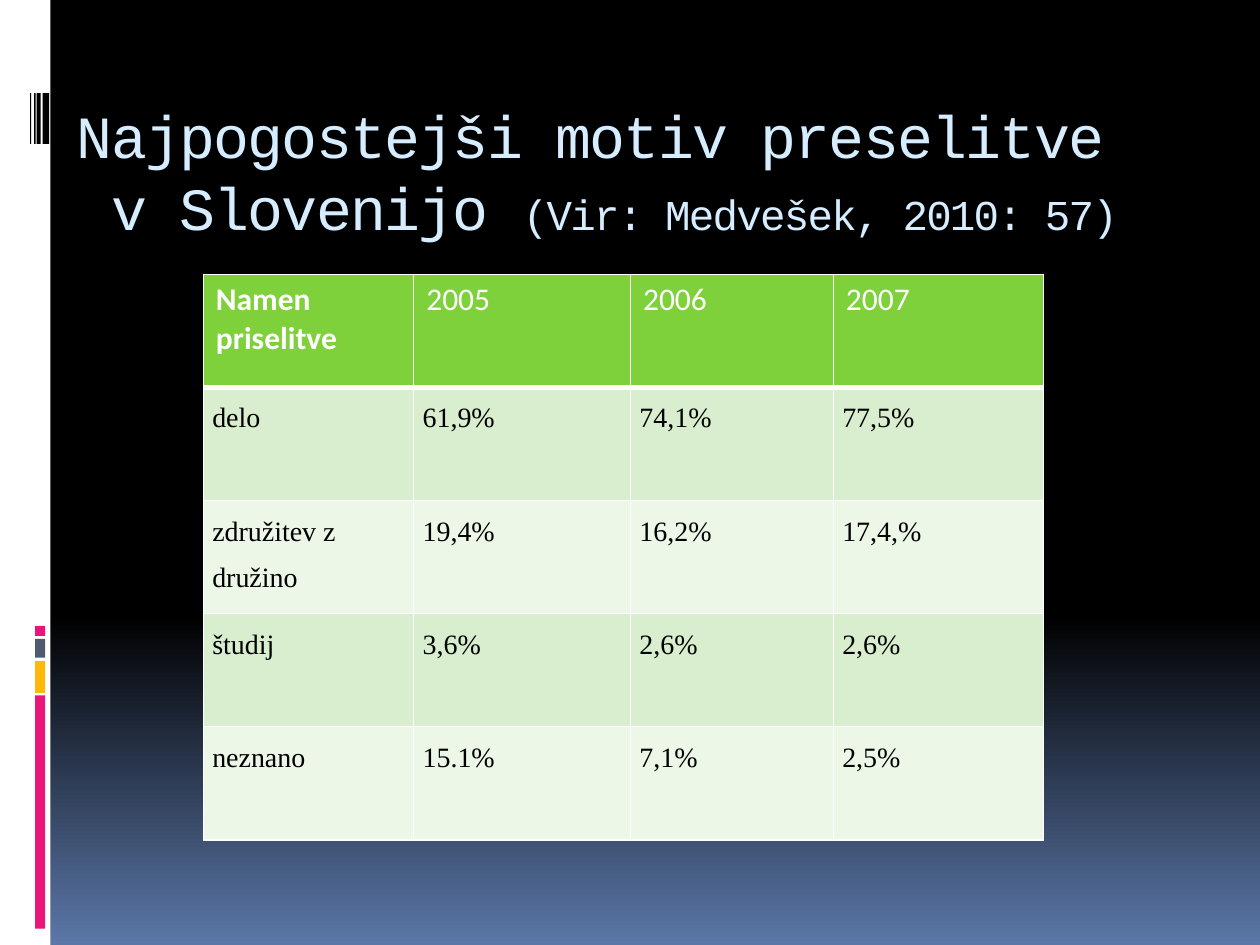
from lxml import etree
from pptx import Presentation
from pptx.dml.color import RGBColor
from pptx.enum.shapes import MSO_SHAPE
from pptx.enum.text import MSO_ANCHOR
from pptx.oxml.ns import qn
from pptx.util import Cm, Pt

COLORS = {
    "black": "000000",
    "white": "FFFFFF",
    "dusk": "5B77A8",
    "pink": "EA157A",
    "amber": "FEB80A",
    "slate": "4E5B6F",
    "title": "D6ECFF",
    "header": "7FD13B",
    "band_dark": "D8EECE",
    "band_light": "ECF7E8",
}
TITLE_FORMAT = {"name": "Courier New", "size": Pt(34.2)}
SOURCE_FORMAT = {"name": "Courier New", "size": Pt(24.3)}
HEADER_FORMAT = {"name": "Calibri", "size": Pt(18)}
BODY_FORMAT = {"name": "Times New Roman", "size": Pt(16)}
BODY_MARGINS = {
    "margin_left": Cm(0.18),
    "margin_right": Cm(0.18),
    "margin_top": 0,
    "margin_bottom": 0,
}
ROWS = [
    ["Namen priselitve", "2005", "2006", "2007"],
    ["delo", "61,9%", "74,1%", "77,5%"],
    ["združitev z družino", "19,4%", "16,2%", "17,4,%"],
    ["študij", "3,6%", "2,6%", "2,6%"],
    ["neznano", "15.1%", "7,1%", "2,5%"],
]
COLUMN_WIDTHS = [4.24, 4.37, 4.09, 4.24]


def color(name):
    return RGBColor.from_string(COLORS[name])


def set_values(target, values):
    for name, value in values.items():
        setattr(target, name, value)


def format_font(font, values, color_name):
    set_values(font, values)
    font.color.rgb = color(color_name)


def paint_background(slide):
    fill = slide.background.fill
    fill.gradient()
    fill.gradient_angle = 270
    for stop, position, name in zip(fill.gradient_stops, (0.65, 1), ("black", "dusk")):
        stop.position = position
        stop.color.rgb = color(name)


def add_block(slide, left, top, width, height, color_name):
    shape = slide.shapes.add_shape(
        MSO_SHAPE.RECTANGLE, Cm(left), Cm(top), Cm(width), Cm(height)
    )
    shape.shadow.inherit = False
    shape.fill.solid()
    shape.fill.fore_color.rgb = color(color_name)
    shape.line.fill.background()


def add_side_strip(slide, left, top, width, height):
    add_block(slide, left, top, width, height, "white")
    for offset, block_height, name in (
        (14.02, 4.7, "pink"),
        (13.33, 0.64, "amber"),
        (12.88, 0.38, "slate"),
        (12.62, 0.2, "pink"),
    ):
        add_block(slide, left + 0.71, top + offset, 0.2, block_height, name)
    for offset, bar_width in ((0.86, 0.13), (0.74, 0.08), (0.69, 0.03), (0.61, 0.02)):
        add_block(slide, left + offset, top + 1.88, bar_width, 1.02, "black")


def add_title(slide, left, top, width, height):
    text_box = slide.shapes.add_textbox(Cm(left), Cm(top), Cm(width), Cm(height))
    frame = text_box.text_frame
    set_values(frame, {
        "word_wrap": True,
        "vertical_anchor": MSO_ANCHOR.TOP,
        "margin_top": Cm(0.26),
    })
    paragraph = frame.paragraphs[0]
    paragraph.line_spacing = Pt(41)
    for text, values in (
        ("Najpogostejši motiv preselitve", TITLE_FORMAT),
        (" v Slovenijo ", TITLE_FORMAT),
        ("(Vir: Medvešek, 2010: 57)", SOURCE_FORMAT),
    ):
        if text.startswith(" "):
            paragraph.add_line_break()
        run = paragraph.add_run()
        run.text = text
        format_font(run.font, values, "title")
        run.font._element.set("spc", "-100")


def add_borders(cell, bottom_width):
    properties = cell._tc.get_or_add_tcPr()
    for side, width in (("lnL", 1), ("lnR", 1), ("lnT", 1), ("lnB", bottom_width)):
        line = etree.SubElement(properties, qn(f"a:{side}"), w=str(Pt(width)))
        fill = etree.SubElement(line, qn("a:solidFill"))
        etree.SubElement(fill, qn("a:srgbClr"), val=COLORS["white"])


def fill_cell(cell, text, row_index, column_index):
    is_header = row_index == 0
    add_borders(cell, 3 if is_header else 1)
    band = "band_dark" if row_index % 2 else "band_light"
    cell.fill.solid()
    cell.fill.fore_color.rgb = color("header" if is_header else band)
    paragraph = cell.text_frame.paragraphs[0]
    run = paragraph.add_run()
    run.text = text
    run.font.bold = is_header and column_index == 0
    if is_header:
        format_font(run.font, HEADER_FORMAT, "white")
    else:
        format_font(run.font, BODY_FORMAT, "black")
        set_values(cell, BODY_MARGINS)
        paragraph.line_spacing = 1.5


def add_motive_table(slide, left, top, width, height):
    table = slide.shapes.add_table(
        len(ROWS), len(COLUMN_WIDTHS), Cm(left), Cm(top), Cm(width), Cm(height)
    ).table
    for column, column_width in zip(table.columns, COLUMN_WIDTHS):
        column.width = Cm(column_width)
    for row_index, values in enumerate(ROWS):
        table.rows[row_index].height = Cm(height / len(ROWS))
        for column_index, text in enumerate(values):
            fill_cell(table.cell(row_index, column_index), text, row_index, column_index)


def main():
    presentation = Presentation()
    presentation.slide_width = Cm(25.4)
    presentation.slide_height = Cm(19.05)
    slide = presentation.slides.add_slide(presentation.slide_layouts[6])
    paint_background(slide)
    add_side_strip(slide, 0, 0, 1.02, 19.05)
    add_title(slide, 1.3, 1.73, 22.86, 3.18)
    add_motive_table(slide, 4.1, 5.53, sum(COLUMN_WIDTHS), 11.4)
    presentation.save("out.pptx")


if __name__ == "__main__":
    main()
